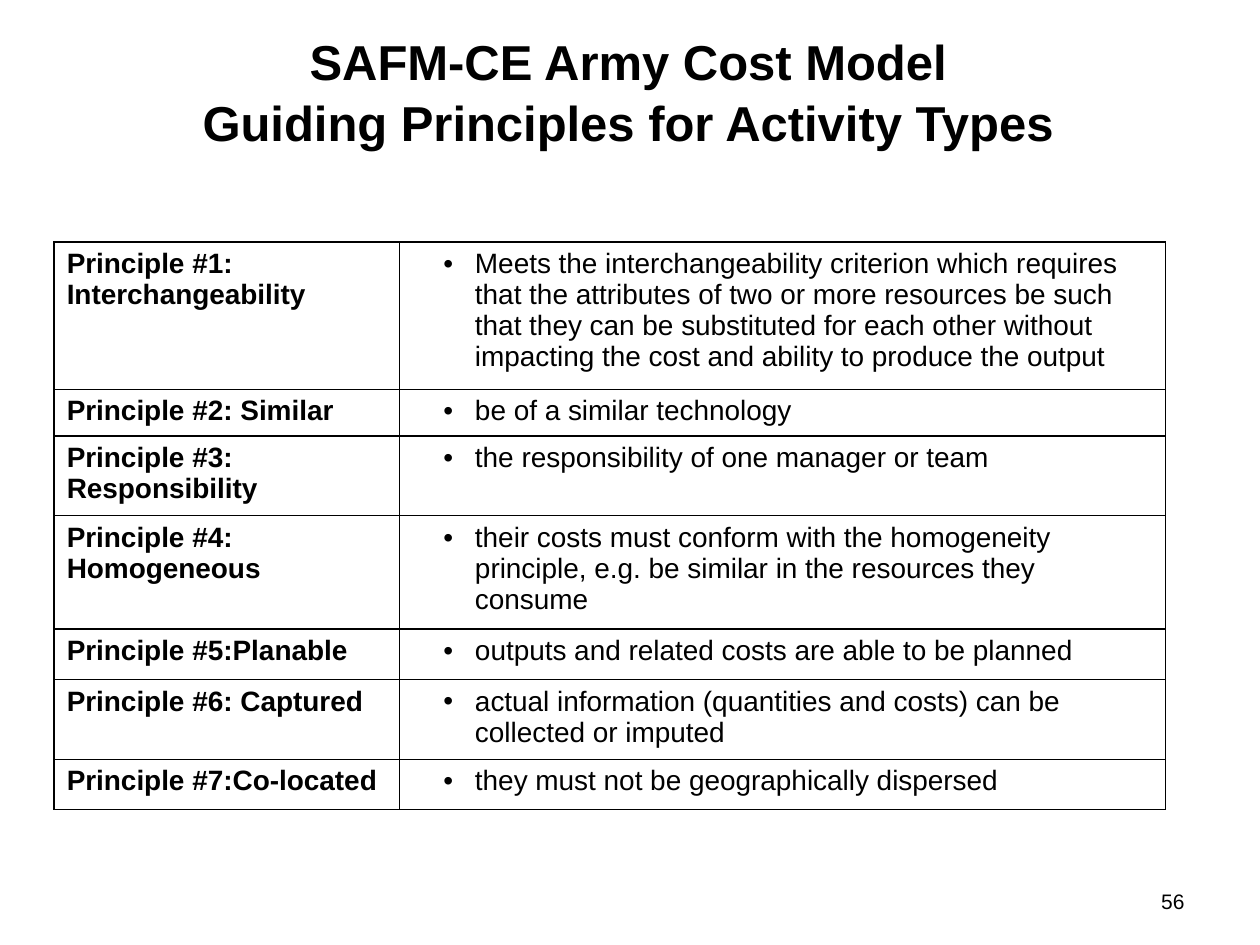
from lxml import etree
from pptx import Presentation
from pptx.dml.color import RGBColor
from pptx.enum import text
from pptx.oxml.ns import qn
from pptx.util import Inches, Pt

BLACK = "000000"
COLUMNS = [2.74, 6.08]
ROWS = [
    (1.17, "Principle #1: Interchangeability",
     "Meets the interchangeability criterion which requires that the attributes of two or more "
     "resources be such that they can be substituted for each other without impacting the cost "
     "and ability to produce the output"),
    (0.37, "Principle #2: Similar", "be of a similar technology"),
    (0.63, "Principle #3: Responsibility", "the responsibility of one manager or team"),
    (0.9, "Principle #4: Homogeneous",
     "their costs must conform with the homogeneity principle, e.g. be similar in the resources "
     "they consume"),
    (0.4, "Principle #5:Planable", "outputs and related costs are able to be planned"),
    (0.63, "Principle #6: Captured",
     "actual information (quantities and costs) can be collected or imputed"),
    (0.4, "Principle #7:Co-located", "they must not be geographically dispersed"),
]


def color(hex_string):
    """Turn a hex string into a colour."""
    return RGBColor.from_string(hex_string)


def format_runs(p, size, bold=False):
    """Format every run of a paragraph."""
    for r in p.runs:
        r.font.name = "Arial"
        r.font.size = Pt(size)
        r.font.bold = bold
        r.font.color.rgb = color(BLACK)


def add_text(s, box, words, size, align, bold=False, inset=0.05):
    """Add a text box and return its text frame."""
    tf = s.shapes.add_textbox(*map(Inches, box)).text_frame
    tf.word_wrap = True
    tf.margin_top = tf.margin_bottom = Inches(inset)
    tf.text = words
    for p in tf.paragraphs:
        p.alignment = align
        format_runs(p, size, bold)
    return tf


def add_bullet(p):
    """Give a paragraph a hanging bullet."""
    p.level = 1
    pPr = p._p.get_or_add_pPr()
    pPr.set("marL", str(Inches(0.5)))
    pPr.set("indent", str(Inches(-0.25)))
    etree.SubElement(pPr, qn("a:buFont")).set("typeface", "Arial")
    etree.SubElement(pPr, qn("a:buChar")).set("char", "•")


def set_borders(cell, hex_string, width):
    """Draw all four borders of a cell."""
    tcPr = cell._tc.get_or_add_tcPr()
    for i, side in enumerate(("lnL", "lnR", "lnT", "lnB")):
        ln = etree.Element(qn(f"a:{side}"), w=str(Pt(width)))
        fill = etree.SubElement(ln, qn("a:solidFill"))
        etree.SubElement(fill, qn("a:srgbClr")).set("val", hex_string)
        tcPr.insert(i, ln)


def fill_cell(cell, words, bold=False, bullet=False):
    """Write and style one table cell."""
    cell.text = words
    p = cell.text_frame.paragraphs[0]
    if bullet:
        add_bullet(p)
    format_runs(p, 16, bold)
    cell.fill.background()
    set_borders(cell, BLACK, 1)


def add_principles(s):
    """Add the table of principles."""
    height = sum(row[0] for row in ROWS)
    frame = s.shapes.add_table(len(ROWS), len(COLUMNS), Inches(0.43), Inches(1.92),
                               Inches(sum(COLUMNS)), Inches(height))
    table = frame.table
    table.first_row = table.horz_banding = False
    for column, width in zip(table.columns, COLUMNS):
        column.width = Inches(width)
    for i, (row_height, principle, meaning) in enumerate(ROWS):
        table.rows[i].height = Inches(row_height)
        fill_cell(table.cell(i, 0), principle, bold=True)
        fill_cell(table.cell(i, 1), meaning, bullet=True)


def main():
    """Build the slide and save it."""
    prs = Presentation()
    prs.slide_width, prs.slide_height = Inches(10), Inches(7.5)
    s = prs.slides.add_slide(prs.slide_layouts[6])
    add_text(s, (7.17, 7, 2.33, 0.4), "56", 12, text.PP_ALIGN.RIGHT)
    title = add_text(s, (1.32, 0.25, 7.33, 0.93),
                     "SAFM-CE Army Cost Model\nGuiding Principles for Activity Types",
                     28, text.PP_ALIGN.CENTER, bold=True, inset=0)
    title.paragraphs[1].space_before = Pt(1.5)
    add_principles(s)
    prs.save("out.pptx")


if __name__ == "__main__":
    main()
